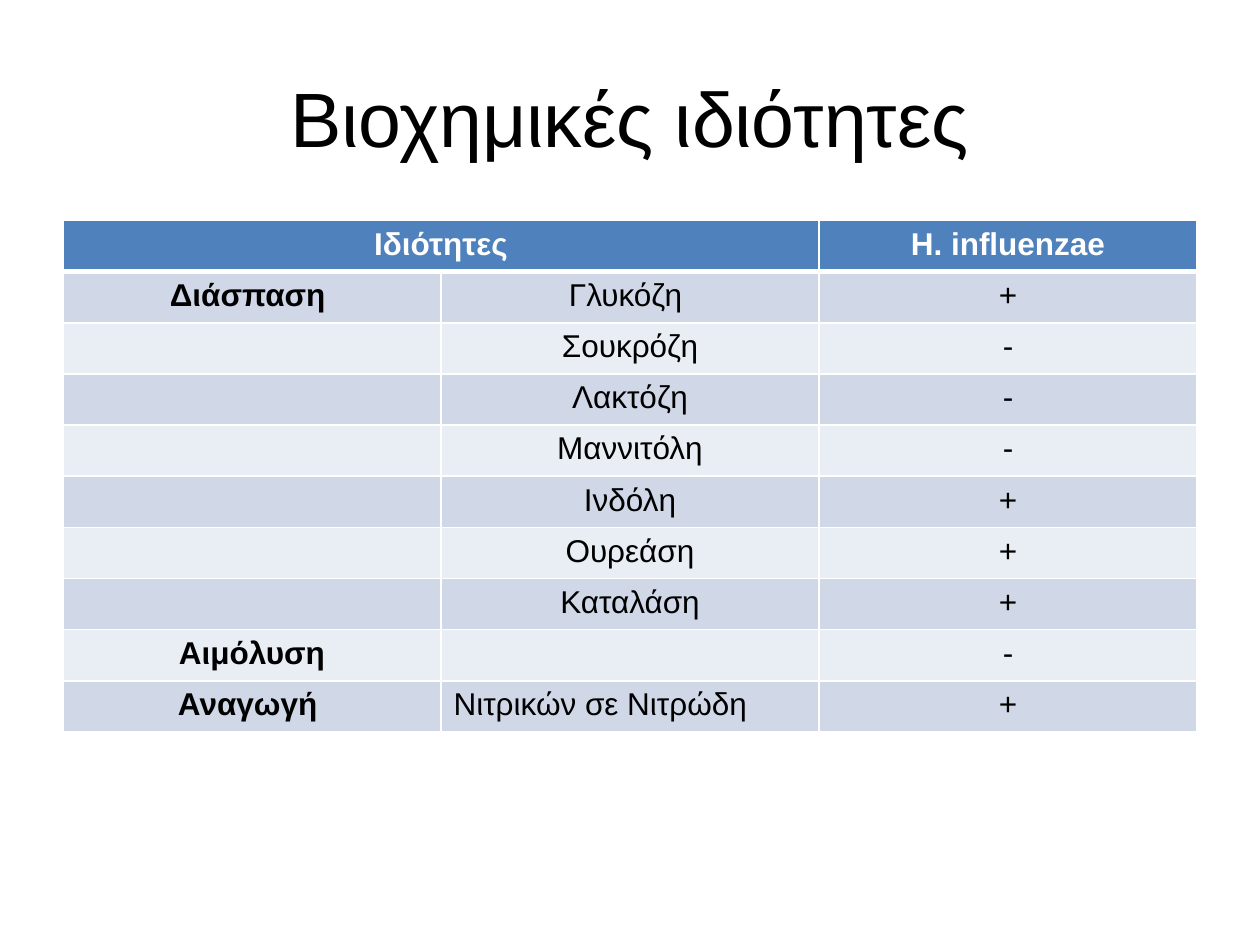
from dataclasses import dataclass

from lxml.etree import SubElement
from pptx import Presentation
from pptx.dml.color import RGBColor
from pptx.enum.text import MSO_ANCHOR as Anchor, PP_ALIGN as Align
from pptx.oxml.ns import qn
from pptx.util import Inches, Pt

BLACK = RGBColor(0x00, 0x00, 0x00)
WHITE = RGBColor(0xFF, 0xFF, 0xFF)
BLUE = RGBColor(0x4F, 0x81, 0xBD)
DARK = RGBColor(0xD0, 0xD8, 0xE8)
LIGHT = RGBColor(0xE9, 0xED, 0xF4)


@dataclass
class Trait:
    group: str
    name: str
    sign: str
    align: Align = Align.CENTER


TRAITS = [
    Trait("Διάσπαση ", "Γλυκόζη ", "+"),
    Trait("", "Σουκρόζη", "-"),
    Trait("", "Λακτόζη", "-"),
    Trait("", "Μαννιτόλη", "-"),
    Trait("", "Ινδόλη", "+"),
    Trait("", "Ουρεάση", "+"),
    Trait("", "Καταλάση", "+"),
    Trait("Αιμόλυση", "", "-"),
    Trait("Αναγωγή ", "Νιτρικών σε Νιτρώδη", "+", Align.LEFT),
]


def write(frame, text: str, *, size: int = 18, color: RGBColor = BLACK,
          bold: bool = False, align: Align = Align.CENTER) -> None:
    para = frame.paragraphs[0]
    para.alignment = align
    font = para.font
    if text:
        run = para.add_run()
        run.text = text
        font = run.font
    font.name = "Arial"
    font.size = Pt(size)
    font.bold = bold
    font.color.rgb = color


def edge(cell, top: int = 1, bottom: int = 1) -> None:
    props = cell._tc.get_or_add_tcPr()
    for side, width in zip("LRTB", (1, 1, top, bottom)):
        line = SubElement(props, qn(f"a:ln{side}"), w=str(Pt(width)))
        fill = SubElement(line, qn("a:solidFill"))
        SubElement(fill, qn("a:srgbClr"), val=str(WHITE))


def paint(cell, color: RGBColor) -> None:
    cell.fill.solid()
    cell.fill.fore_color.rgb = color


def draw_title(slide, text: str) -> None:
    box = slide.shapes.add_textbox(Inches(0.5), Inches(0.3), Inches(9), Inches(1.25))
    box.text_frame.word_wrap = True
    box.text_frame.vertical_anchor = Anchor.MIDDLE
    write(box.text_frame, text, size=44)


def draw_table(slide, traits: list[Trait]) -> None:
    count = len(traits) + 1
    table = slide.shapes.add_table(
        count, 3, Inches(0.5), Inches(1.75), Inches(9), Inches(4.06)).table
    for col, text in enumerate(("Ιδιότητες", "", "H. influenzae")):
        cell = table.cell(0, col)
        edge(cell, bottom=3)
        paint(cell, BLUE)
        write(cell.text_frame, text, color=WHITE, bold=True)
    table.cell(0, 0).merge(table.cell(0, 1))
    for row, trait in enumerate(traits, 1):
        for col, text in enumerate((trait.group, trait.name, trait.sign)):
            cell = table.cell(row, col)
            edge(cell, top=3 if row == 1 else 1)
            paint(cell, DARK if row % 2 else LIGHT)
            write(cell.text_frame, text, bold=col == 0,
                  align=trait.align if col == 1 else Align.CENTER)


def main() -> None:
    deck = Presentation()
    deck.slide_width = Inches(10)
    deck.slide_height = Inches(7.5)
    slide = deck.slides.add_slide(deck.slide_layouts[6])
    draw_title(slide, "Βιοχημικές ιδιότητες")
    draw_table(slide, TRAITS)
    deck.save("out.pptx")


if __name__ == "__main__":
    main()
